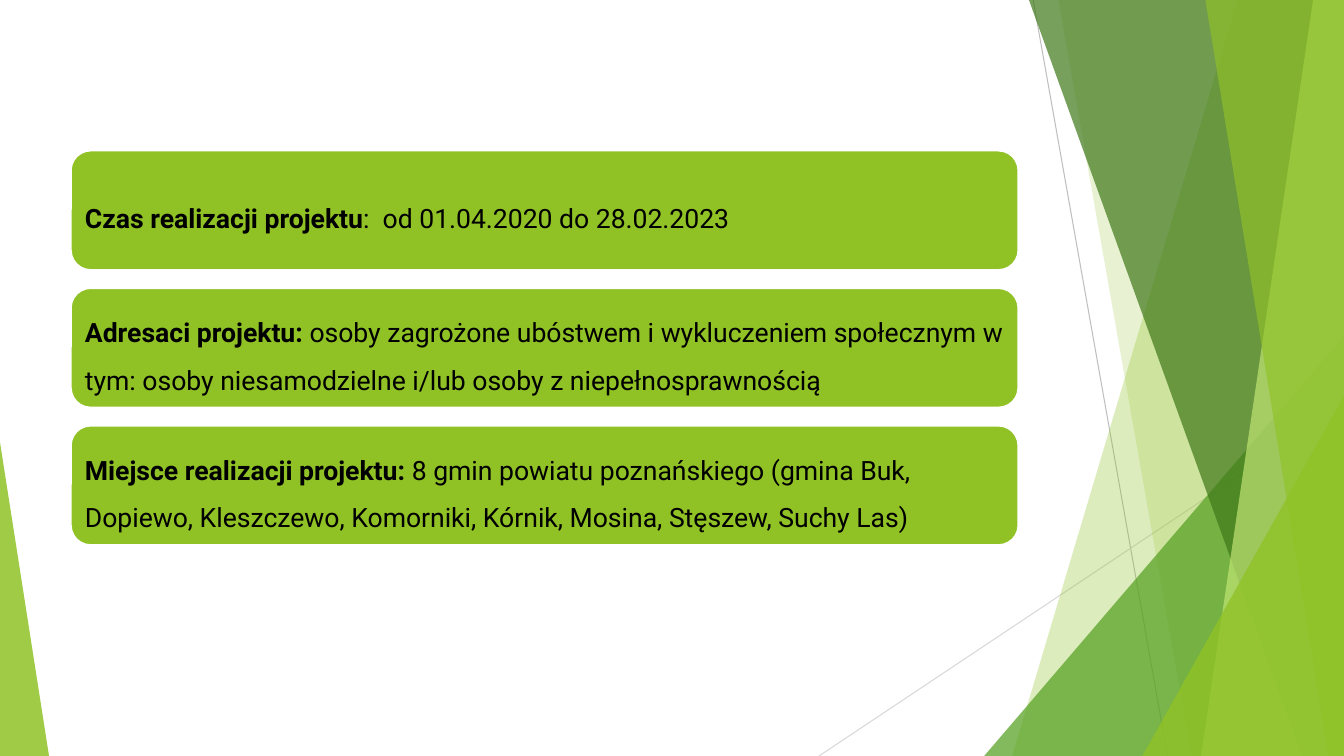
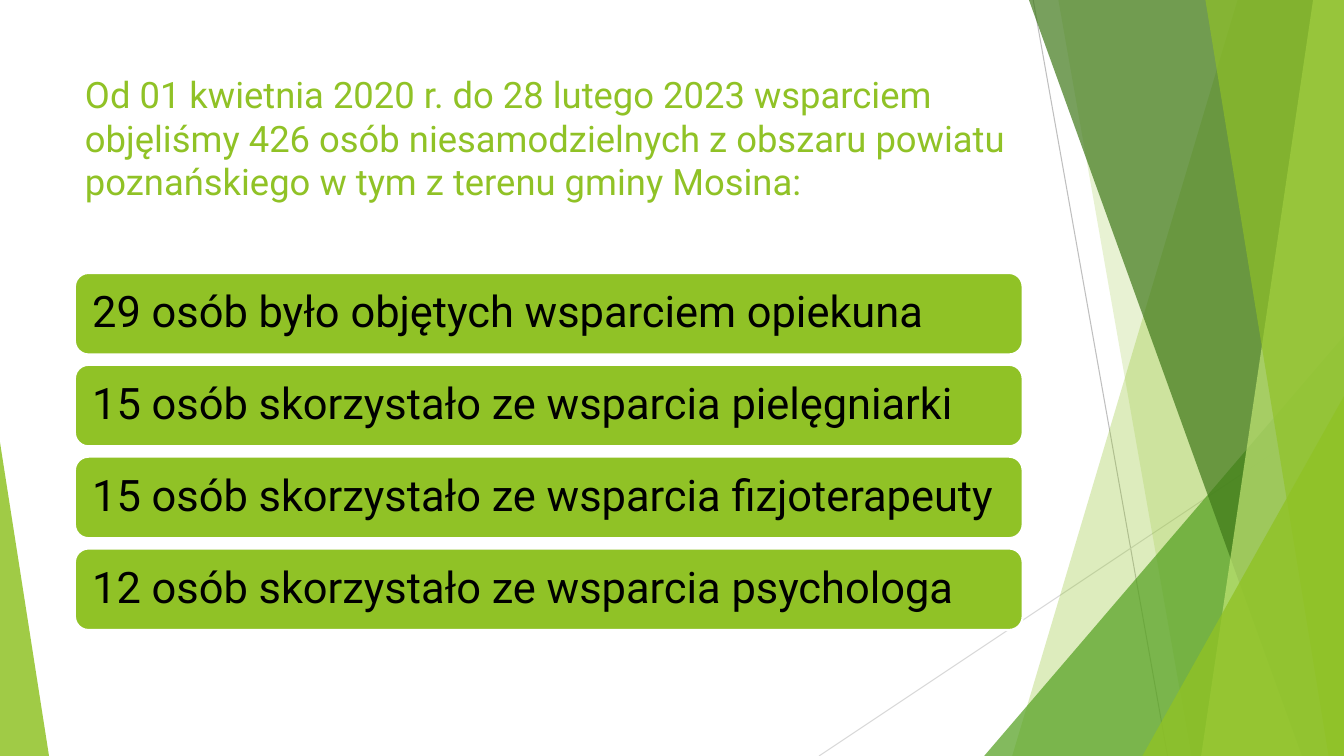
from lxml.etree import SubElement
from pptx import Presentation
from pptx.dml.color import RGBColor
from pptx.enum.shapes import MSO_CONNECTOR, MSO_SHAPE
from pptx.enum.text import MSO_ANCHOR, PP_ALIGN
from pptx.oxml.ns import qn
from pptx.util import Pt

WIDE, HIGH = 960, 540
FONT = "Roboto"
GREEN, LEAF, DARK, LIME = "90C226", "54A021", "3F7819", "C0E474"
BLACK, WHITE = "000000", "FFFFFF"

# Background parts, from back to front
LINES = [(738, 0, 834, 540, "BFBFBF"), (960, 290, 585, 540, "D9D9D9")]
# Bands reach the right edge: top x, bottom x, colour, opacity
BACK = [(884, 723, GREEN, 30), (756, 851, GREEN, 20)]
FRONT = [(735, 930, DARK, 70), (938, 858, LIME, 70), (861, 949, GREEN, 65)]
# Corner triangles: left, top, width, apex, colour, opacity
BASE = (703, 240, 257, 1, LEAF, 72)
CORNERS = [(816, 283, 144, 1, GREEN, 80), (0, 316, 35, 0, GREEN, 85)]

FACTS = [
    ("Czas realizacji projektu", ":  od 01.04.2020 do 28.02.2023"),
    ("Adresaci projektu: ",
     "osoby zagrożone ubóstwem i wykluczeniem społecznym w tym: "
     "osoby niesamodzielne i/lub osoby z niepełnosprawnością"),
    ("Miejsce realizacji projektu: ",
     "8 gmin powiatu poznańskiego (gmina Buk, Dopiewo, Kleszczewo, "
     "Komorniki, Kórnik, Mosina, Stęszew, Suchy Las)"),
]
TITLE = ("Od 01 kwietnia 2020 r. do 28 lutego 2023 wsparciem objęliśmy "
         "426 osób niesamodzielnych z obszaru powiatu poznańskiego "
         "w tym z terenu gminy Mosina:")
COUNTS = [
    ("", "29 osób było objętych wsparciem opiekuna"),
    ("", "15 osób skorzystało ze wsparcia pielęgniarki"),
    ("", "15 osób skorzystało ze wsparcia fizjoterapeuty"),
    ("", "12 osób skorzystało ze wsparcia psychologa"),
]


def color(code):
    return RGBColor.from_string(code)


def paint(shape, code, alpha=100):
    shape.shadow.inherit = False
    shape.fill.solid()
    shape.fill.fore_color.rgb = color(code)
    shape.line.fill.background()
    if alpha < 100:
        tone = shape.fill._xPr.find(".//" + qn("a:srgbClr"))
        SubElement(tone, qn("a:alpha"), val=str(alpha * 1000))


def style(para, size, code, space=1.0):
    para.alignment = PP_ALIGN.LEFT
    para.line_spacing = space
    para.font.name = FONT
    para.font.size = Pt(size)
    para.font.color.rgb = color(code)


def line(slide, x1, y1, x2, y2, code):
    item = slide.shapes.add_connector(
        MSO_CONNECTOR.STRAIGHT, Pt(x1), Pt(y1), Pt(x2), Pt(y2))
    item.line.color.rgb = color(code)
    item.line.width = Pt(0.75)
    SubElement(item._element.spPr, qn("a:effectLst"))


def band(slide, top, base, code, alpha):
    pen = slide.shapes.build_freeform(Pt(top), 0)
    pen.add_line_segments(
        [(Pt(x), Pt(y)) for x, y in ((WIDE, 0), (WIDE, HIGH), (base, HIGH))])
    paint(pen.convert_to_shape(), code, alpha)


def corner(slide, x, y, width, apex, code, alpha):
    item = slide.shapes.add_shape(
        MSO_SHAPE.ISOSCELES_TRIANGLE, Pt(x), Pt(y), Pt(width), Pt(HIGH - y))
    item.adjustments[0] = apex
    paint(item, code, alpha)


def decor(slide):
    """Shared facets at the sides of each slide."""
    for spec_line in LINES:
        line(slide, *spec_line)
    for facet in BACK:
        band(slide, *facet)
    corner(slide, *BASE)
    for facet in FRONT:
        band(slide, *facet)
    for facet in CORNERS:
        corner(slide, *facet)


def card(slide, box, lead, body, size, inset, space):
    item = slide.shapes.add_shape(
        MSO_SHAPE.ROUNDED_RECTANGLE, *[Pt(v) for v in box])
    paint(item, GREEN)
    item.line.color.rgb = color(WHITE)
    item.line.width = Pt(1.5)
    frame = item.text_frame
    frame.word_wrap = True
    frame.vertical_anchor = MSO_ANCHOR.MIDDLE
    frame.margin_left = frame.margin_right = Pt(inset)
    frame.margin_top = frame.margin_bottom = Pt(inset)
    para = frame.paragraphs[0]
    style(para, size, BLACK, space)
    if lead:
        run = para.add_run()
        run.text = lead
        run.font.bold = True
    para.add_run().text = body


def stack(slide, box, rows, gap, size, inset, space):
    """Column of equal cards that fills the box."""
    x, y, width, height = box
    each = (height - gap * (len(rows) - 1)) / len(rows)
    for i, (lead, body) in enumerate(rows):
        spot = (x, y + i * (each + gap), width, each)
        card(slide, spot, lead, body, size, inset, space)


def heading(slide, box, text):
    title = slide.shapes.title
    title.left, title.top, title.width, title.height = [Pt(v) for v in box]
    frame = title.text_frame
    frame.word_wrap = True
    frame.vertical_anchor = MSO_ANCHOR.TOP
    frame.text = text
    style(frame.paragraphs[0], 26, GREEN)


def main():
    deck = Presentation()
    deck.slide_width, deck.slide_height = Pt(WIDE), Pt(HIGH)
    plain, titled = deck.slide_layouts[6], deck.slide_layouts[5]

    # Project facts
    slide = deck.slides.add_slide(plain)
    decor(slide)
    stack(slide, (50.5, 107.5, 677, 282), FACTS, 12.75, 19, 6, 1.5)

    # Support figures
    slide = deck.slides.add_slide(titled)
    decor(slide)
    heading(slide, (53.5, 48, 677, 104), TITLE)
    stack(slide, (53.5, 195, 677, 255), COUNTS, 7.4, 31, 9.5, 0.9)

    deck.save("out.pptx")


if __name__ == "__main__":
    main()
